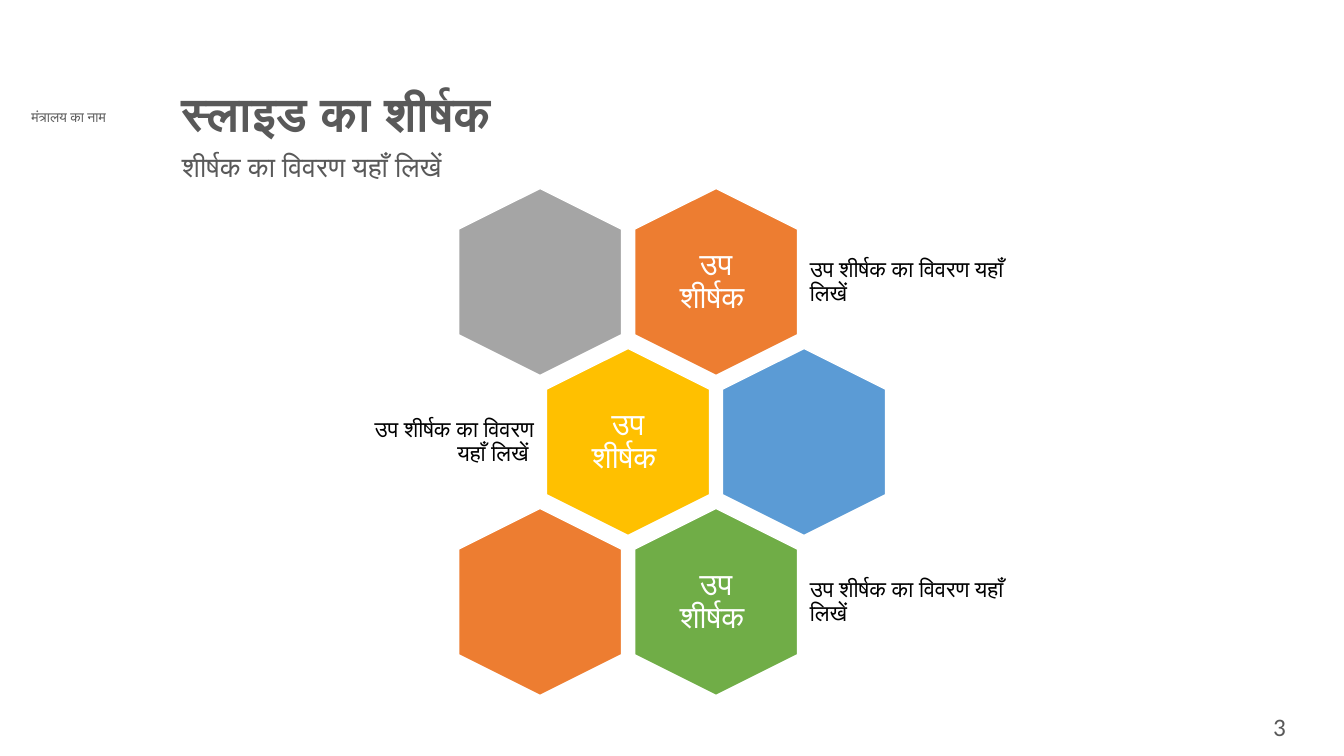
from dataclasses import dataclass

from pptx import Presentation
from pptx.dml.color import RGBColor
from pptx.enum.shapes import MSO_SHAPE
from pptx.enum.text import MSO_ANCHOR, PP_ALIGN
from pptx.util import Emu, Pt

LABEL = "उप शीर्षक "
DETAIL = "उप शीर्षक का विवरण यहाँ लिखें"


@dataclass(frozen=True)
class Theme:
    white: str = "FFFFFF"
    black: str = "000000"
    gray: str = "595959"
    silver: str = "A5A5A5"
    orange: str = "ED7D31"
    gold: str = "FFC000"
    blue: str = "5B9BD5"
    green: str = "70AD47"
    font: str = "Calibri"
    ministry_font: str = "Lato"
    title_size: int = 34
    label_size: int = 22
    subtitle_size: int = 20
    number_size: int = 18
    detail_size: int = 16
    ministry_size: int = 10


THEME = Theme()

# text, (left, top, width, height), size, font, bold, alignment, line spacing
HEADINGS = [
    ("मंत्रालय का नाम", (3, 104, 131, 27), THEME.ministry_size,
     THEME.ministry_font, False, PP_ALIGN.CENTER, 1.0),
    ("स्लाइड का शीर्षक", (172, 85, 969, 55), THEME.title_size,
     THEME.font, True, PP_ALIGN.LEFT, 0.9),
    ("शीर्षक का विवरण यहाँ लिखें", (172, 148, 969, 64), THEME.subtitle_size,
     THEME.font, False, PP_ALIGN.LEFT, 0.9),
    ("3", (1220, 706, 119, 45), THEME.number_size,
     THEME.font, False, PP_ALIGN.CENTER, 1.0),
]

# row, half-column, fill, side of the detail text (None for an empty hexagon)
HEXAGONS = [
    (0, 0, THEME.silver, None),
    (0, 2, THEME.orange, "right"),
    (1, 1, THEME.gold, "left"),
    (1, 3, THEME.blue, None),
    (2, 0, THEME.orange, None),
    (2, 2, THEME.green, "right"),
]

FIRST_X, FIRST_Y = 540, 282
HALF_COLUMN, ROW = 88, 160
HEX_LENGTH, HEX_BREADTH = 187, 163
LABEL_SIZE = (113, 129)
DETAIL_HEIGHT = 113
RIGHT_WIDTH, LEFT_WIDTH = 210, 203
DETAIL_OFFSET = 87


def px(value):
    return Emu(round(value * 914400 / 100.8))


def centred(x, y, width, height):
    """Return the frame of a box whose middle is at x, y."""
    return x - width / 2, y - height / 2, width, height


def add_text(page, text, frame, size, color=THEME.gray, font=THEME.font, bold=False,
             align=PP_ALIGN.LEFT, spacing=0.9, anchor=MSO_ANCHOR.TOP, inset=None):
    box = page.shapes.add_textbox(*map(px, frame))
    body = box.text_frame
    body.word_wrap = True
    body.vertical_anchor = anchor
    if inset is not None:
        body.margin_left = body.margin_right = px(inset)
        body.margin_top = body.margin_bottom = px(inset)
    para = body.paragraphs[0]
    para.alignment = align
    para.line_spacing = spacing
    span = para.add_run()
    span.text = text
    span.font.size = Pt(size)
    span.font.name = font
    span.font.bold = bold
    span.font.color.rgb = RGBColor.from_string(color)


def add_hexagon(page, x, y, fill):
    hexagon = page.shapes.add_shape(
        MSO_SHAPE.HEXAGON, *map(px, centred(x, y, HEX_LENGTH, HEX_BREADTH)))
    hexagon.rotation = 90
    hexagon.shadow.inherit = False
    hexagon.fill.solid()
    hexagon.fill.fore_color.rgb = RGBColor.from_string(fill)
    hexagon.line.color.rgb = RGBColor.from_string(THEME.white)
    hexagon.line.width = Pt(1)


def add_captions(page, x, y, side):
    """Write the label on a hexagon and the detail beside it."""
    add_text(page, LABEL, centred(x, y, *LABEL_SIZE), THEME.label_size, THEME.white,
             align=PP_ALIGN.CENTER, anchor=MSO_ANCHOR.MIDDLE, inset=9)
    top = y - DETAIL_HEIGHT / 2
    if side == "right":
        text, align = DETAIL, PP_ALIGN.LEFT
        frame = (x + DETAIL_OFFSET, top, RIGHT_WIDTH, DETAIL_HEIGHT)
    else:
        text, align = DETAIL + " ", PP_ALIGN.RIGHT
        frame = (x - DETAIL_OFFSET - LEFT_WIDTH, top, LEFT_WIDTH, DETAIL_HEIGHT)
    add_text(page, text, frame, THEME.detail_size, THEME.black,
             align=align, anchor=MSO_ANCHOR.MIDDLE, inset=7)


def main():
    deck = Presentation()
    deck.slide_width, deck.slide_height = px(1344), px(756)
    page = deck.slides.add_slide(deck.slide_layouts[6])
    for text, frame, size, font, bold, align, spacing in HEADINGS:
        add_text(page, text, frame, size, font=font, bold=bold,
                 align=align, spacing=spacing)
    for row, half_column, fill, side in HEXAGONS:
        x = FIRST_X + half_column * HALF_COLUMN
        y = FIRST_Y + row * ROW
        add_hexagon(page, x, y, fill)
        if side:
            add_captions(page, x, y, side)
    deck.save("out.pptx")


if __name__ == "__main__":
    main()
